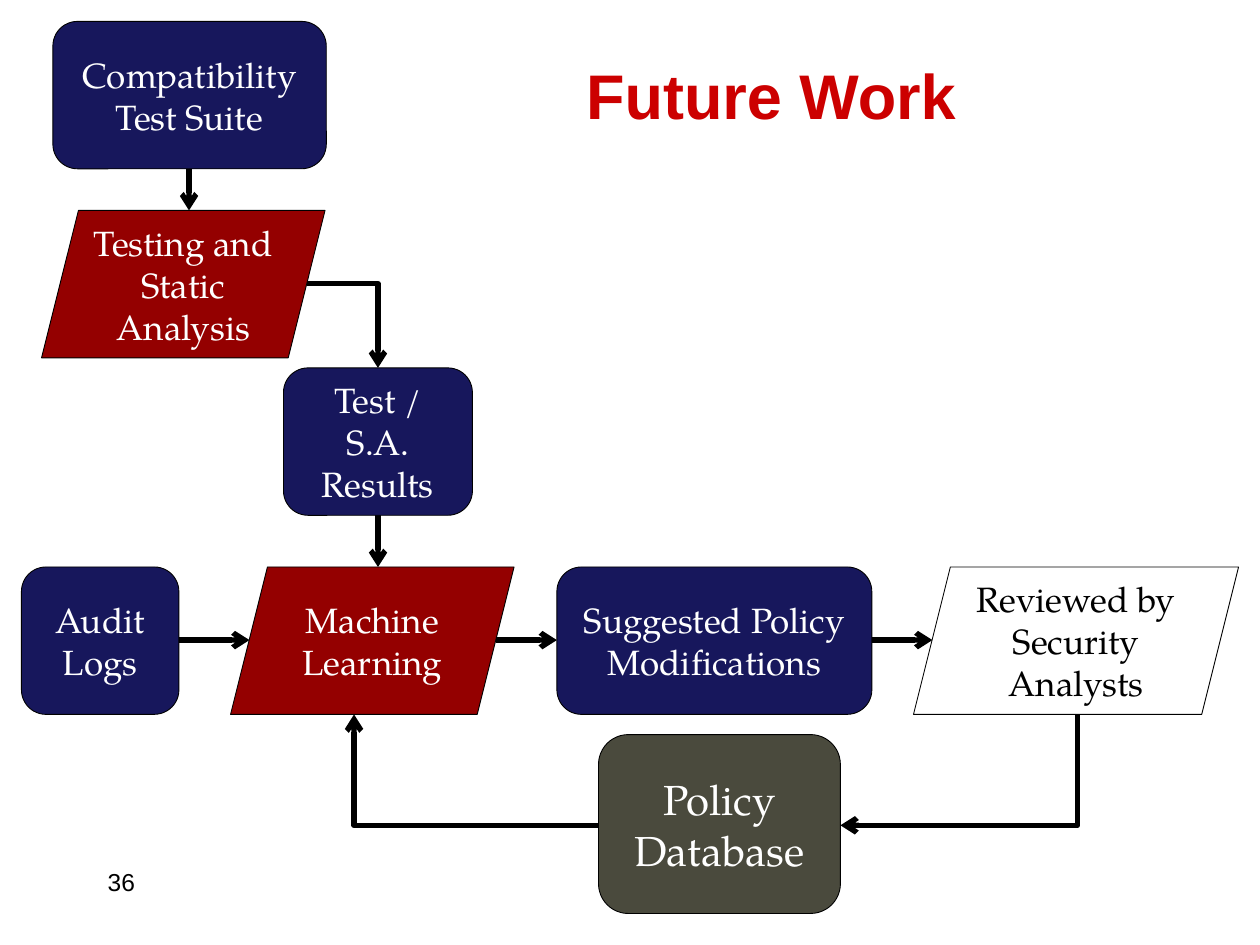
import pptx
import pptx.dml.color
import pptx.enum.shapes
import pptx.enum.text
import pptx.oxml
import pptx.oxml.ns
import pptx.util

Inches = pptx.util.Inches
Pt = pptx.util.Pt
RGB = pptx.dml.color.RGBColor.from_string
SHAPE = pptx.enum.shapes.MSO_SHAPE
ALIGN = pptx.enum.text.PP_ALIGN
ANCHOR = pptx.enum.text.MSO_ANCHOR

COLORS = {"data": "17175C", "process": "940000", "database": "4A4A3D",
          "title": "CC0000", "black": "000000", "white": "FFFFFF"}

deck = pptx.Presentation()
deck.slide_width, deck.slide_height = Inches(10), Inches(7.5)
page = deck.slides.add_slide(deck.slide_layouts[6])


def write(box, text, size=20, font="TeX Gyre Pagella", color="white", bold=False,
          align=ALIGN.CENTER, anchor=ANCHOR.MIDDLE):
    frame = box.text_frame
    frame.word_wrap = True
    frame.vertical_anchor = anchor
    paragraph = frame.paragraphs[0]
    paragraph.text = text
    paragraph.alignment = align
    for span in paragraph.runs:
        span.font.size = Pt(size)
        span.font.name = font
        span.font.bold = bold
        span.font.color.rgb = RGB(COLORS[color])


def add_arrow(left, top, width, height, preset="line", rotation=0):
    """Draw a connector in its unrotated frame, then turn it by whole degrees."""
    arrow = page.shapes.add_connector(
        pptx.enum.shapes.MSO_CONNECTOR.STRAIGHT, Inches(left), Inches(top),
        Inches(left + width), Inches(top + height))
    arrow.line.color.rgb = RGB(COLORS["black"])
    arrow.line.width = Pt(3)
    properties = arrow._element.spPr
    properties.find(pptx.oxml.ns.qn("a:prstGeom")).set("prst", preset)
    if rotation:
        properties.find(pptx.oxml.ns.qn("a:xfrm")).set("rot", str(rotation * 60000))
    namespace = pptx.oxml.ns.nsdecls("a")
    arrow.line._get_or_add_ln().append(
        pptx.oxml.parse_xml(f'<a:tailEnd {namespace} type="arrow"/>'))
    properties.append(pptx.oxml.parse_xml(f"<a:effectLst {namespace}/>"))


# Straight arrows, then elbow arrows; the boxes cover their hidden ends
for left, top, width, height in [
        (1.5, 0.92, 0, 0.75), (3, 3.75, 0, 0.75),
        (1.42, 5.08, 0.56, 0), (3.94, 5.08, 0.48, 0), (6.92, 5.08, 0.48, 0)]:
    add_arrow(left, top, width, height)

for left, top, width, height, rotation in [
        (7.17, 5.17, 0.88, 1.88, 90),
        (2.81, 5.67, 1.94, 0.88, 180),
        (2.44, 2.25, 0.56, 0.67, 0)]:
    add_arrow(left, top, width, height, preset="bentConnector2", rotation=rotation)

title = page.shapes.add_textbox(Inches(2.58), Inches(0.25), Inches(7.08), Inches(1))
write(title, "Future Work", size=36, font="Arial", color="title", bold=True)

number = page.shapes.add_textbox(Inches(0.67), Inches(6.83), Inches(0.5), Inches(0.5))
write(number, "36", size=14, font="Arial", color="black",
      align=ALIGN.RIGHT, anchor=ANCHOR.TOP)

# Rounded boxes hold data, parallelograms are processing steps
ROUND, SLANTED = SHAPE.ROUNDED_RECTANGLE, SHAPE.PARALLELOGRAM
ROW_HEIGHT = 1.17
for text, kind, fill, left, top, width, height, size in [
        ("Audit\nLogs", ROUND, "data", 0.17, 4.5, 1.25, ROW_HEIGHT, 20),
        ("Policy\nDatabase", ROUND, "database", 4.75, 5.83, 1.92, 1.42, 24),
        ("Machine Learning", SLANTED, "process", 1.83, 4.5, 2.25, ROW_HEIGHT, 20),
        ("Suggested Policy Modifications", ROUND, "data", 4.42, 4.5, 2.5, ROW_HEIGHT, 20),
        ("Reviewed by Security Analysts", SLANTED, None, 7.25, 4.5, 2.58, ROW_HEIGHT, 20),
        ("Test / S.A.\nResults", ROUND, "data", 2.25, 2.92, 1.5, ROW_HEIGHT, 20),
        ("Testing and\nStatic Analysis", SLANTED, "process", 0.33, 1.67, 2.25, ROW_HEIGHT, 20),
        ("Compatibility Test Suite", ROUND, "data", 0.42, 0.17, 2.17, ROW_HEIGHT, 20)]:
    box = page.shapes.add_shape(kind, Inches(left), Inches(top), Inches(width), Inches(height))
    box.shadow.inherit = False
    box.line.color.rgb = RGB(COLORS["black"])
    box.line.width = Pt(0.5)
    if fill:
        box.fill.solid()
        box.fill.fore_color.rgb = RGB(COLORS[fill])
    else:
        box.fill.background()
    write(box, text, size=size, color="white" if fill else "black")

deck.save("out.pptx")
